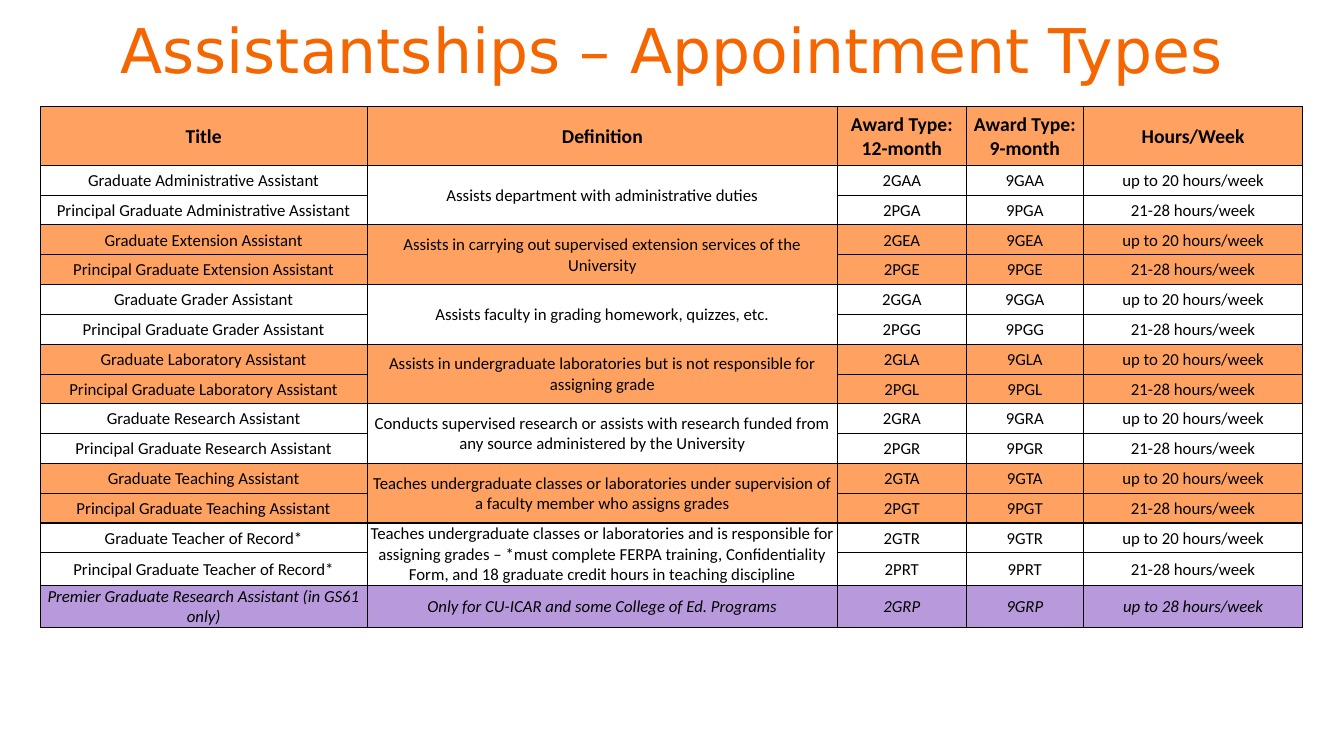
"""Build the slide of graduate assistantship appointment types."""
import pptx
import pptx.dml.color
import pptx.enum.text
import pptx.oxml
import pptx.oxml.ns
import pptx.util
from pptx.util import Inches

ORANGE = pptx.dml.color.RGBColor(0xF5, 0x66, 0x00)
LIGHT_ORANGE = pptx.dml.color.RGBColor(0xFF, 0xA2, 0x61)
PURPLE = pptx.dml.color.RGBColor(0xB8, 0x9A, 0xDC)
WHITE = pptx.dml.color.RGBColor(0xFF, 0xFF, 0xFF)
BLACK = pptx.dml.color.RGBColor(0x00, 0x00, 0x00)


def write_text(frame, text, size=12, font="Calibri", color=BLACK, bold=False,
               italic=False, spacing=1.0):
    frame.word_wrap = True
    paragraph = frame.paragraphs[0]
    paragraph.alignment = pptx.enum.text.PP_ALIGN.CENTER
    paragraph.line_spacing = spacing
    run = paragraph.add_run()
    run.text = text
    run.font.size = pptx.util.Pt(size)
    run.font.name = font
    run.font.color.rgb = color
    run.font.bold = bold
    run.font.italic = italic


def format_cell(cell, fill, top, bottom):
    cell.vertical_anchor = pptx.enum.text.MSO_ANCHOR.MIDDLE
    cell.margin_left = cell.margin_right = cell.margin_top = Inches(0.01)
    cell.margin_bottom = 0
    cell.fill.solid()
    cell.fill.fore_color.rgb = fill
    properties = cell._tc.get_or_add_tcPr()
    edges = (("lnL", 0.5), ("lnR", 0.5), ("lnT", top), ("lnB", bottom))
    for position, (edge, points) in enumerate(edges):
        properties.insert(position, pptx.oxml.parse_xml(
            f'<a:{edge} {pptx.oxml.ns.nsdecls("a")} w="{pptx.util.Pt(points)}">'
            f'<a:solidFill><a:srgbClr val="{BLACK}"/></a:solidFill></a:{edge}>'))


headings = ["Title", "Definition", "Award Type: 12-month", "Award Type: 9-month",
            "Hours/Week"]
appointments = [
    ("Administrative Assistant", "GAA", "PGA",
     "Assists department with administrative duties"),
    ("Extension Assistant", "GEA", "PGE",
     "Assists in carrying out supervised extension services of the University"),
    ("Grader Assistant", "GGA", "PGG",
     "Assists faculty in grading homework, quizzes, etc."),
    ("Laboratory Assistant", "GLA", "PGL",
     "Assists in undergraduate laboratories but is not responsible for "
     "assigning grade"),
    ("Research Assistant", "GRA", "PGR",
     "Conducts supervised research or assists with research funded from any "
     "source administered by the University"),
    ("Teaching Assistant", "GTA", "PGT",
     "Teaches undergraduate classes or laboratories under supervision of a "
     "faculty member who assigns grades"),
    ("Teacher of Record*", "GTR", "PRT",
     "Teaches undergraduate classes or laboratories and is responsible for "
     "assigning grades – *must complete FERPA training, Confidentiality Form, "
     "and 18 graduate credit hours in teaching discipline"),
]
premier = ["Premier Graduate Research Assistant (in GS61 only)",
           "Only for CU-ICAR and some College of Ed. Programs",
           "2GRP", "9GRP", "up to 28 hours/week"]

rows = [(headings, LIGHT_ORANGE, 1, 1, {"size": 14, "bold": True})]
for index, (role, code, principal_code, definition) in enumerate(appointments):
    band = LIGHT_ORANGE if index % 2 else WHITE
    rows.append(([f"Graduate {role}", definition, f"2{code}", f"9{code}",
                  "up to 20 hours/week"], band, 1, 0.5, {}))
    rows.append(([f"Principal Graduate {role}", "", f"2{principal_code}",
                  f"9{principal_code}", "21-28 hours/week"], band, 0.5, 1, {}))
rows.append((premier, PURPLE, 0.5, 1, {"italic": True}))

presentation = pptx.Presentation()
presentation.slide_width = Inches(13.33)
presentation.slide_height = Inches(7.5)
slide = presentation.slides.add_slide(presentation.slide_layouts[5])

title = slide.shapes.title
title.left, title.top = Inches(0.92), Inches(0.01)
title.width, title.height = Inches(11.5), Inches(1.04)
title.text_frame.vertical_anchor = pptx.enum.text.MSO_ANCHOR.MIDDLE
write_text(title.text_frame, "Assistantships – Appointment Types", size=44,
           font="DejaVu Sans", color=ORANGE, spacing=0.9)

appointment_table = slide.shapes.add_table(
    len(rows), len(headings), Inches(0.4), Inches(1.06), Inches(12.53),
    Inches(5.16)).table
appointment_table.first_row = False
appointment_table.horz_banding = False
for column, width in zip(appointment_table.columns, (3.24, 4.67, 1.27, 1.17, 2.17)):
    column.width = Inches(width)

for row_index, (texts, fill, top, bottom, text_format) in enumerate(rows):
    heading_row = row_index == 0
    appointment_table.rows[row_index].height = (
        Inches(0.58) if heading_row else Inches(3.55) // 12)
    for column_index, text in enumerate(texts):
        cell = appointment_table.cell(row_index, column_index)
        is_definition = column_index == 1
        format_cell(cell, fill, 1 if is_definition else top,
                    1 if is_definition else bottom)
        if text:
            write_text(cell.text_frame, text, **text_format)

for first_row in range(1, 2 * len(appointments), 2):
    appointment_table.cell(first_row, 1).merge(
        appointment_table.cell(first_row + 1, 1))

presentation.save("out.pptx")
